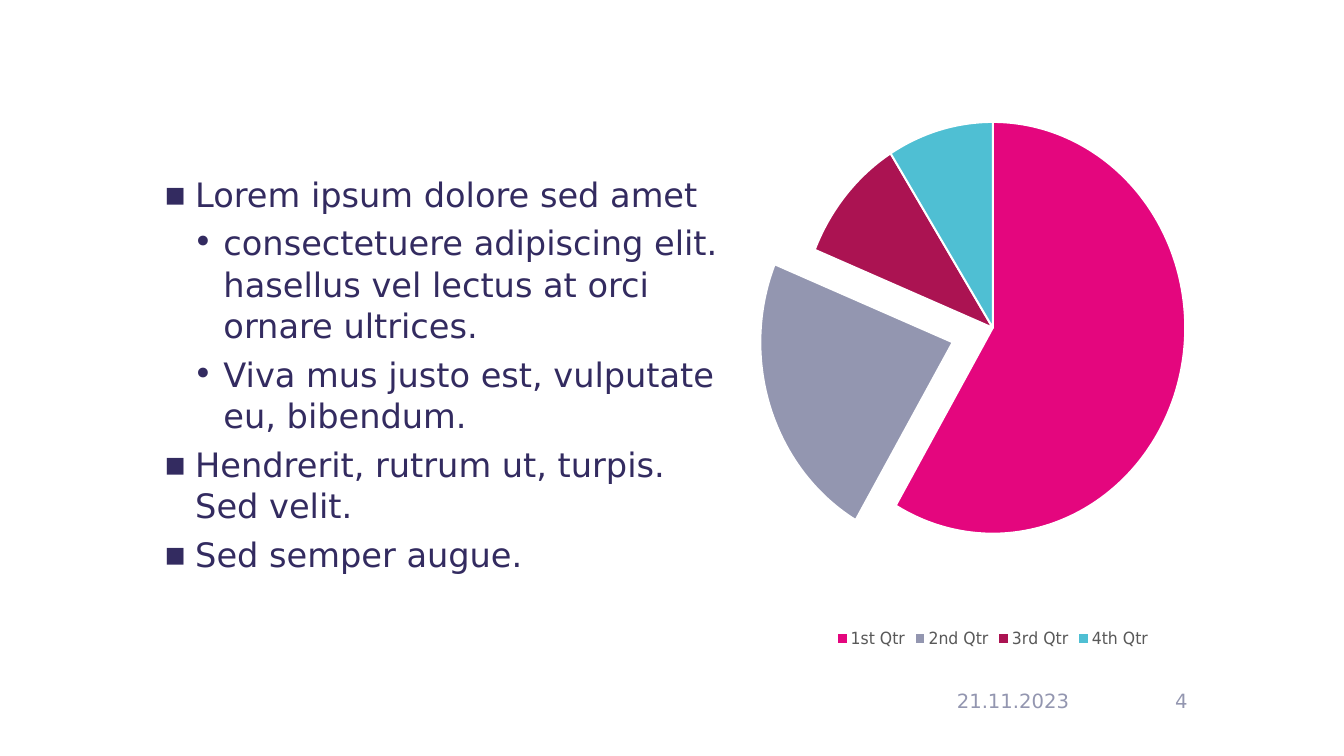
from lxml.etree import SubElement
from pptx import Presentation
from pptx.chart.data import CategoryChartData
from pptx.dml.color import RGBColor
from pptx.enum.chart import XL_CHART_TYPE, XL_LEGEND_POSITION
from pptx.enum.text import MSO_ANCHOR, MSO_AUTO_SIZE, PP_ALIGN
from pptx.oxml import parse_xml
from pptx.oxml.ns import nsdecls, qn
from pptx.util import Inches, Pt

WIDE, HIGH = 13.33, 7.5
INK, GREY, TEXT, WHITE = "332B60", "9396B0", "595959", "FFFFFF"
FACE = "DejaVu Sans"
LEVELS = [("▪", 0.31, 0.31), ("•", 0.59, 0.3)]
LIST = [
    (0, "Lorem ipsum dolore sed amet"),
    (1, "consectetuere adipiscing elit. hasellus vel lectus at orci ornare ultrices."),
    (1, "Viva mus justo est, vulputate eu, bibendum."),
    (0, "Hendrerit, rutrum ut, turpis. Sed velit."),
    (0, "Sed semper augue."),
]
SHARES = [
    ("1st Qtr", 59, "E4067E"),
    ("2nd Qtr", 23, GREY),
    ("3rd Qtr", 10, "AB1352"),
    ("4th Qtr", 9, "4FBFD3"),
]


def paint(code):
    return RGBColor.from_string(code)


def style(font, size, color):
    font.name = FACE
    font.size = Pt(size)
    font.color.rgb = paint(color)


def write(para, text, size=24, color=INK, align=PP_ALIGN.LEFT, before=0, line=1.0):
    para.alignment = align
    para.space_before = Pt(before)
    para.line_spacing = line
    run = para.add_run()
    run.text = text
    style(run.font, size, color)


def mark(para, level):
    sign, left, hang = LEVELS[level]
    para.level = level
    props = para._p.get_or_add_pPr()
    props.set("marL", str(Inches(left)))
    props.set("indent", str(-Inches(hang)))
    tint = SubElement(props, qn("a:buClr"))
    SubElement(tint, qn("a:srgbClr"), val=INK)
    SubElement(props, qn("a:buFont"), typeface=FACE)
    SubElement(props, qn("a:buChar"), char=sign)


class Page:
    def __init__(self):
        self.deck = Presentation()
        self.deck.slide_width = Inches(WIDE)
        self.deck.slide_height = Inches(HIGH)
        self.slide = self.deck.slides.add_slide(self.deck.slide_layouts[1])
        title = self.slide.shapes.title.element
        title.getparent().remove(title)

    def area(self, left, top, wide, high):
        return (
            Inches(left * WIDE), Inches(top * HIGH),
            Inches(wide * WIDE), Inches(high * HIGH),
        )

    def bullets(self, box, items):
        body = self.slide.placeholders[1]
        body.left, body.top, body.width, body.height = self.area(*box)
        frame = body.text_frame
        frame.auto_size = MSO_AUTO_SIZE.NONE
        frame.vertical_anchor = MSO_ANCHOR.TOP
        frame.margin_left = frame.margin_right = 0
        frame.margin_top = frame.margin_bottom = 0
        for spot, (level, text) in enumerate(items):
            para = frame.add_paragraph() if spot else frame.paragraphs[0]
            mark(para, level)
            write(para, text, before=5 if spot else 0, line=1.03)

    def note(self, box, text):
        frame = self.slide.shapes.add_textbox(*self.area(*box)).text_frame
        frame.word_wrap = True
        frame.vertical_anchor = MSO_ANCHOR.MIDDLE
        write(frame.paragraphs[0], text, size=14, color=GREY, align=PP_ALIGN.RIGHT)

    def pie(self, box, rows, burst, push, inner):
        names, sums, tints = zip(*rows)
        data = CategoryChartData()
        data.categories = names
        data.add_series("Series 1", sums)
        kind = XL_CHART_TYPE.PIE
        chart = self.slide.shapes.add_chart(kind, *self.area(*box), data).chart
        chart.has_title = False
        style(chart.font, 10, "000000")
        chart.has_legend = True
        legend = chart.legend
        legend.position = XL_LEGEND_POSITION.BOTTOM
        legend.include_in_layout = False
        style(legend.font, 12, TEXT)
        plot = chart.plots[0]
        plot.vary_by_categories = True
        for spot, tint in enumerate(tints):
            form = plot.series[0].points[spot].format
            form.fill.solid()
            form.fill.fore_color.rgb = paint(tint)
            form.line.color.rgb = paint(WHITE)
            form.line.width = Pt(1.5)
        slice = chart.element.xpath(".//c:dPt")[burst]
        slice.find(qn("c:spPr")).addprevious(
            parse_xml(f'<c:explosion {nsdecls("c")} val="{push}"/>')
        )
        zone = chart.element.xpath(".//c:plotArea")[0]
        for old in zone.findall(qn("c:layout")):
            zone.remove(old)
        sizes = "".join(f'<c:{key} val="{val}"/>' for key, val in zip("xywh", inner))
        zone.insert(0, parse_xml(
            f'<c:layout {nsdecls("c")}><c:manualLayout>'
            '<c:layoutTarget val="inner"/><c:xMode val="edge"/><c:yMode val="edge"/>'
            f"{sizes}</c:manualLayout></c:layout>"
        ))

    def save(self):
        self.deck.save("out.pptx")


def main():
    page = Page()
    page.pie((0.565, 0.053, 0.326, 0.81), SHARES, 1, 22, (0.03, 0.13, 0.94, 0.68))
    page.bullets((0.122, 0.228, 0.425, 0.633), LIST)
    page.note((0.611, 0.9, 0.192, 0.053), "21.11.2023")
    page.note((0.827, 0.9, 0.064, 0.053), "4")
    page.save()


if __name__ == "__main__":
    main()
